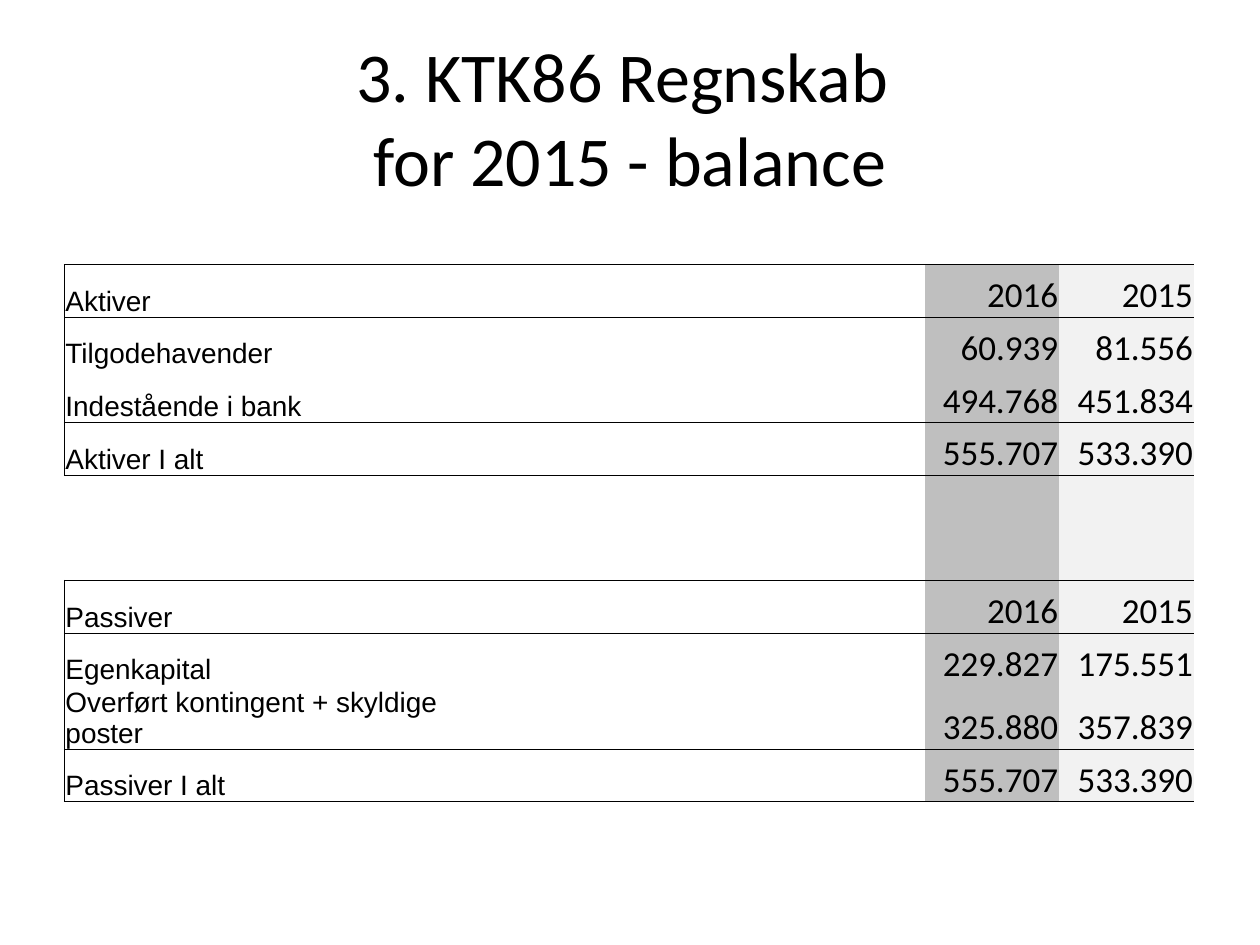
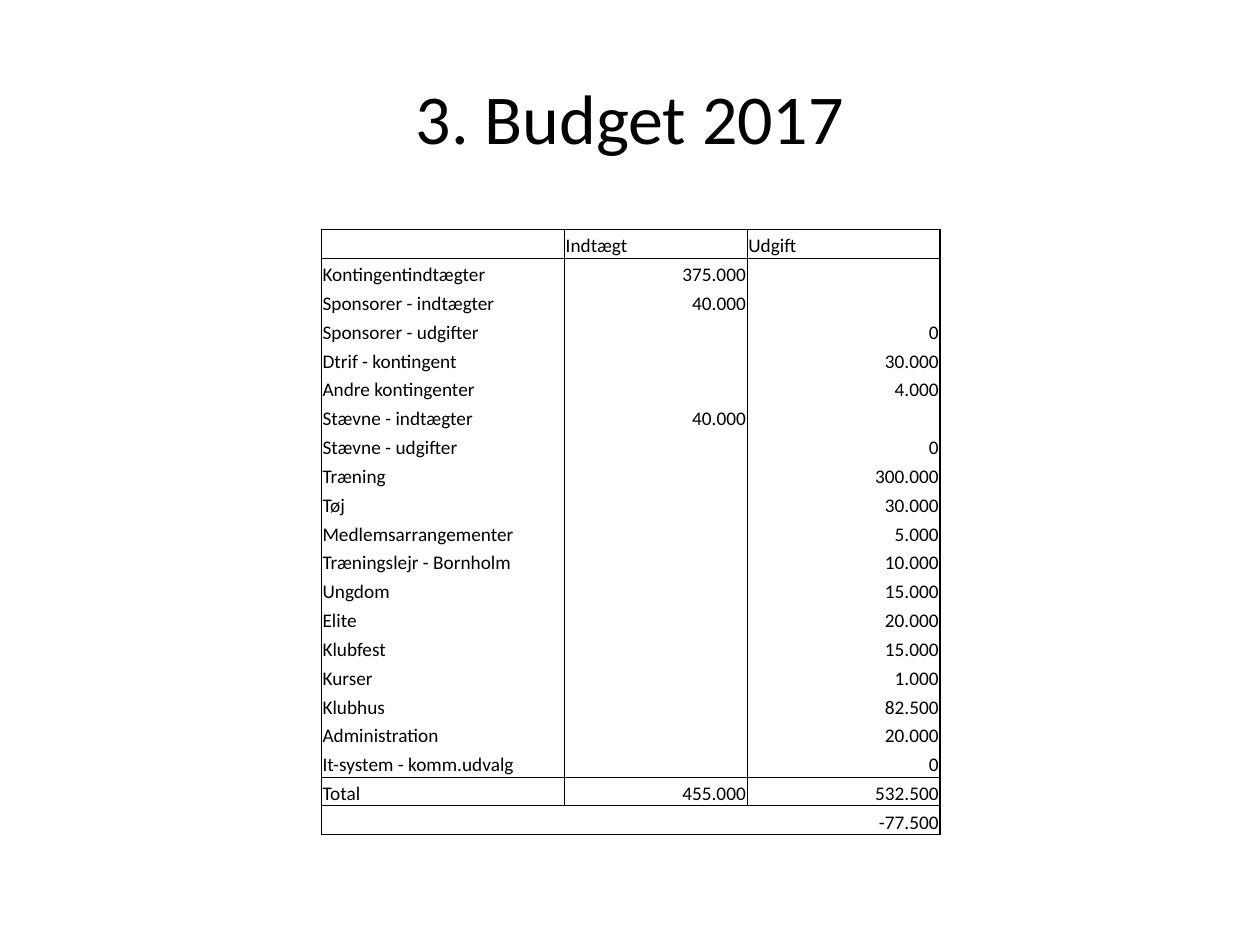
from dataclasses import dataclass

from lxml.etree import SubElement
from pptx import Presentation
from pptx.dml.color import RGBColor
from pptx.enum.text import MSO_ANCHOR, MSO_AUTO_SIZE, PP_ALIGN
from pptx.oxml.ns import qn
from pptx.util import Inches, Pt


@dataclass(frozen=True)
class Theme:
    """Colours, fonts, type sizes and line widths of the deck."""

    ink: str = "000000"
    current_year: str = "BFBFBF"
    previous_year: str = "F2F2F2"
    heading_font: str = "Calibri"
    label_font: str = "Arial"
    title_size: float = 40
    balance_label_size: float = 16
    balance_value_size: float = 20
    budget_size: float = 11
    thin: float = 0.5
    thick: float = 1


THEME = Theme()
TITLE_ONLY_LAYOUT = 5
NO_TABLE_STYLE = "{2D5ABB26-0587-4C30-8999-92F81FD0307C}"

ASSETS = [
    ("Aktiver", "2016", "2015"),
    ("Tilgodehavender", "60.939", "81.556"),
    ("Indestående i bank", "494.768", "451.834"),
    ("Aktiver I alt", "555.707", "533.390"),
]
LIABILITIES = [
    ("Passiver", "2016", "2015"),
    ("Egenkapital", "229.827", "175.551"),
    ("Overført kontingent + skyldige poster", "325.880", "357.839"),
    ("Passiver I alt", "555.707", "533.390"),
]
BUDGET = [
    ("", "Indtægt", "Udgift"),
    ("Kontingentindtægter", "375.000", ""),
    ("Sponsorer - indtægter", "40.000", ""),
    ("Sponsorer - udgifter", "", "0"),
    ("Dtrif - kontingent", "", "30.000"),
    ("Andre kontingenter", "", "4.000"),
    ("Stævne - indtægter", "40.000", ""),
    ("Stævne - udgifter", "", "0"),
    ("Træning", "", "300.000"),
    ("Tøj", "", "30.000"),
    ("Medlemsarrangementer", "", "5.000"),
    ("Træningslejr - Bornholm", "", "10.000"),
    ("Ungdom", "", "15.000"),
    ("Elite", "", "20.000"),
    ("Klubfest", "", "15.000"),
    ("Kurser", "", "1.000"),
    ("Klubhus", "", "82.500"),
    ("Administration", "", "20.000"),
    ("It-system - komm.udvalg", "", "0"),
    ("Total", "455.000", "532.500"),
    ("", "", "-77.500"),
]


def write(frame, text, *, font, size, align=PP_ALIGN.LEFT):
    """Put formatted text in the first paragraph of a text frame."""
    paragraph = frame.paragraphs[0]
    paragraph.text = text
    paragraph.alignment = align
    for run in paragraph.runs:
        run.font.name = font
        run.font.size = Pt(size)
        run.font.color.rgb = RGBColor.from_string(THEME.ink)
    if not text:
        paragraph._p.get_or_add_endParaRPr().set("sz", str(size * 100))


def add_titled_slide(deck, text):
    """Add a slide with the shared title style."""
    slide = deck.slides.add_slide(deck.slide_layouts[TITLE_ONLY_LAYOUT])
    title = slide.shapes.title
    title.left, title.top = Inches(0.5), Inches(0.3)
    title.width, title.height = Inches(9), Inches(1.25)
    frame = title.text_frame
    frame.vertical_anchor = MSO_ANCHOR.MIDDLE
    frame.auto_size = MSO_AUTO_SIZE.NONE
    write(frame, text, font=THEME.heading_font, size=THEME.title_size,
          align=PP_ALIGN.CENTER)
    return slide


def draw_border(cell, side, width):
    """Draw one side (L, R, T or B) of a cell, or clear it at zero width."""
    line = SubElement(cell._tc.get_or_add_tcPr(), qn(f"a:ln{side}"),
                      w=str(Pt(width)))
    if width:
        ink = SubElement(line, qn("a:solidFill"))
        SubElement(ink, qn("a:srgbClr"), val=THEME.ink)
    else:
        SubElement(line, qn("a:noFill"))


def draw_rules(cell, row, column, horizontals, verticals):
    """Draw the cell's share of the table's horizontal and vertical rules."""
    for side, edge in (("L", column), ("R", column + 1)):
        width, ruled_rows = verticals.get(edge, (0, ()))
        draw_border(cell, side, width if row in ruled_rows else 0)
    for side, edge in (("T", row), ("B", row + 1)):
        draw_border(cell, side, horizontals.get(edge, 0))


def add_ledger(slide, rows, *, left, top, height, widths, label_style,
               value_style, horizontals, verticals, column_fills):
    """Add a table whose figures are right-aligned and whose labels are left-aligned."""
    table = slide.shapes.add_table(
        len(rows), len(widths), Inches(left), Inches(top),
        Inches(sum(widths)), Inches(height)).table
    table.first_row = table.horz_banding = False
    table._tbl.tblPr.find(qn("a:tableStyleId")).text = NO_TABLE_STYLE
    for column, width in zip(table.columns, widths):
        column.width = Inches(width)
    for r, texts in enumerate(rows):
        for c, text in enumerate(texts):
            cell = table.cell(r, c)
            cell.margin_left = cell.margin_right = cell.margin_top = Inches(0.01)
            cell.margin_bottom = 0
            cell.vertical_anchor = MSO_ANCHOR.BOTTOM
            is_figure = text[-1:].isdigit()
            font, size = value_style if is_figure else label_style
            write(cell.text_frame, text, font=font, size=size,
                  align=PP_ALIGN.RIGHT if is_figure else PP_ALIGN.LEFT)
            draw_rules(cell, r, c, horizontals, verticals)
            if c in column_fills:
                cell.fill.solid()
                cell.fill.fore_color.rgb = RGBColor.from_string(column_fills[c])
            else:
                cell.fill.background()


def add_balance_slide(deck):
    """Add the balance sheet with assets above liabilities."""
    slide = add_titled_slide(deck, "3. KTK86 Regnskab \vfor 2015 - balance")
    gap = [("", "", "")] * 2
    rows = [(label, "", "", "", "", current, previous)
            for label, current, previous in ASSETS + gap + LIABILITIES]
    liabilities_start = len(ASSETS + gap)
    block_rules = (0, 1, 3, 4)
    ruled_edges = [start + edge for start in (0, liabilities_start)
                   for edge in block_rules]
    labelled_rows = [r for r, texts in enumerate(rows) if texts[0]]
    add_ledger(
        slide, rows, left=0.51, top=2.1, height=4.18,
        widths=[3.19] + [0.91] * 4 + [1.07] * 2,
        label_style=(THEME.label_font, THEME.balance_label_size),
        value_style=(THEME.heading_font, THEME.balance_value_size),
        horizontals={edge: THEME.thin for edge in ruled_edges},
        verticals={0: (THEME.thin, labelled_rows)},
        column_fills={5: THEME.current_year, 6: THEME.previous_year})


def add_budget_slide(deck):
    """Add the budget with income and expense columns."""
    slide = add_titled_slide(deck, "3. Budget 2017")
    count = len(BUDGET)
    all_rows, rows_above_result = range(count), range(count - 1)
    budget_style = (THEME.heading_font, THEME.budget_size)
    add_ledger(
        slide, BUDGET, left=2.55, top=1.82, height=4.81,
        widths=[1.93, 1.45, 1.53],
        label_style=budget_style, value_style=budget_style,
        horizontals={0: THEME.thick, 1: THEME.thin, count - 2: THEME.thin,
                     count - 1: THEME.thin, count: THEME.thick},
        verticals={0: (THEME.thick, all_rows),
                   1: (THEME.thin, rows_above_result),
                   2: (THEME.thin, rows_above_result),
                   3: (THEME.thick, all_rows)},
        column_fills={})


def main():
    """Build and save the deck."""
    deck = Presentation()
    deck.slide_width, deck.slide_height = Inches(10), Inches(7.5)
    add_balance_slide(deck)
    add_budget_slide(deck)
    deck.save("out.pptx")


if __name__ == "__main__":
    main()
